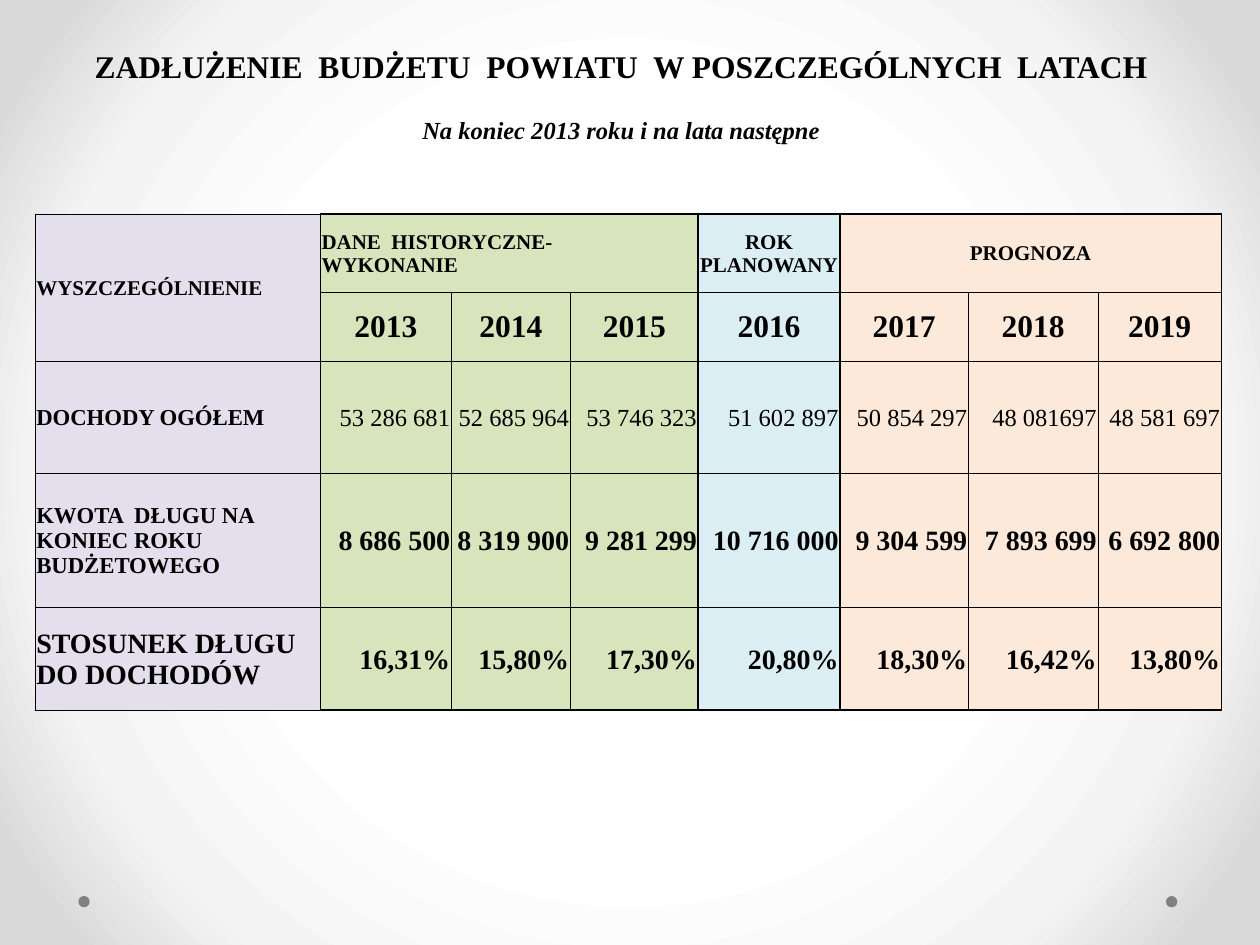
from lxml import etree
from pptx import Presentation
from pptx.dml.color import RGBColor
from pptx.enum.shapes import MSO_SHAPE as Shape
from pptx.enum.text import MSO_ANCHOR as Anchor, PP_ALIGN as Align
from pptx.oxml import parse_xml
from pptx.oxml.ns import nsdecls, qn
from pptx.util import Pt

FONT = "Times New Roman"
COLORS = {
    "text": "000000", "dot": "808080", "label": "E4DFEC", "history": "D8E4BC",
    "planned": "DAEEF3", "forecast": "FDE9D9",
}
BACKDROP = [(50, "FFFFFF"), (76, "F4F4F4"), (92, "DADADA")]

COLUMN_WIDTHS = [163, 75, 68, 73, 81, 73.5, 74, 70.5]
ROW_HEIGHTS = [44.5, 39.5, 64, 77, 58.5]
COLUMN_FILLS = ["label"] + ["history"] * 3 + ["planned"] + ["forecast"] * 3
GROUP_STARTS, GROUP_ENDS = {1, 4, 5}, {0, 3, 4, 7}
HEADINGS = [  # text, row, column, last row, last column, alignment
    ("WYSZCZEGÓLNIENIE", 0, 0, 1, 0, Align.LEFT),
    ("DANE  HISTORYCZNE-  WYKONANIE", 0, 1, 0, 3, Align.LEFT),
    ("ROK PLANOWANY", 0, 4, 0, 4, Align.CENTER),
    ("PROGNOZA", 0, 5, 0, 7, Align.CENTER),
]
YEARS = range(2013, 2020)
FIGURES = [  # label, label size, value size, bold values, values
    ("DOCHODY OGÓŁEM", 13, 14, False,
     ["53 286 681", "52 685 964", "53 746 323", "51 602 897",
      "50 854 297", "48 081697", "48 581 697"]),
    ("KWOTA  DŁUGU NA KONIEC ROKU BUDŻETOWEGO", 13, 16, True,
     ["8 686 500", "8 319 900", "9 281 299", "10 716 000",
      "9 304 599", "7 893 699", "6 692 800"]),
    ("STOSUNEK DŁUGU DO DOCHODÓW", 16, 16, True,
     ["16,31%", "15,80%", "17,30%", "20,80%", "18,30%", "16,42%", "13,80%"]),
]


def write(para, text, size=12, bold=True, italic=False, align=Align.LEFT,
          spacing=1.0, before=0):
    para.alignment = align
    para.line_spacing = spacing
    para.space_before = Pt(before)
    span = para.add_run()
    span.text = text
    font = span.font
    font.name, font.size, font.bold, font.italic = FONT, Pt(size), bold, italic
    font.color.rgb = RGBColor.from_string(COLORS["text"])


def set_borders(cell, **widths):
    """Draw left, top, right and bottom borders; a width of 0 means no line."""
    properties = cell._tc.get_or_add_tcPr()
    for index, side in enumerate("LTRB"):
        width = widths.get(side, 0)
        line = etree.Element(qn(f"a:ln{side}"), w=str(Pt(width)))
        if width:
            fill = etree.SubElement(line, qn("a:solidFill"))
            etree.SubElement(fill, qn("a:srgbClr"), val=COLORS["text"])
        else:
            etree.SubElement(line, qn("a:noFill"))
        properties.insert(index, line)


def set_margins(cell, side, top, bottom):
    cell.margin_left = cell.margin_right = Pt(side)
    cell.margin_top, cell.margin_bottom = Pt(top), Pt(bottom)


def add_plain_table(page, rows, columns, left, top, width, height):
    table = page.shapes.add_table(
        rows, columns, Pt(left), Pt(top), Pt(width), Pt(height)).table
    table.first_row = table.horz_banding = False
    return table


def add_backdrop(page):
    stops = "".join(
        f'<a:gs pos="{position * 1000}"><a:srgbClr val="{color}"/></a:gs>'
        for position, color in BACKDROP)
    background = parse_xml(
        f'<p:bg {nsdecls("p", "a")}><p:bgPr><a:gradFill rotWithShape="1">'
        f'<a:gsLst>{stops}</a:gsLst><a:path path="circle">'
        '<a:fillToRect l="50000" t="50000" r="50000" b="50000"/></a:path>'
        '</a:gradFill><a:effectLst/></p:bgPr></p:bg>')
    page._element.cSld.insert(0, background)


def add_corner_dots(page, left, top, width, size):
    for x in (left, left + width - size):
        dot = page.shapes.add_shape(Shape.OVAL, Pt(x), Pt(top), Pt(size), Pt(size))
        dot.shadow.inherit = False
        dot.fill.solid()
        dot.fill.fore_color.rgb = RGBColor.from_string(COLORS["dot"])
        dot.line.fill.background()


def add_title(page, left, top, width, height):
    cell = add_plain_table(page, 1, 1, left, top, width, height).cell(0, 0)
    set_margins(cell, 7.2, 0, 0)
    set_borders(cell)
    cell.fill.background()
    frame = cell.text_frame
    write(frame.paragraphs[0], "ZADŁUŻENIE  BUDŻETU  POWIATU  W POSZCZEGÓLNYCH  LATACH",
          size=18, align=Align.CENTER, spacing=1.15)
    write(frame.add_paragraph(), "Na koniec 2013 roku i na lata następne",
          size=14, italic=True, align=Align.CENTER, spacing=1.15, before=16)


def add_debt_table(page, left, top):
    rows, columns = len(ROW_HEIGHTS), len(COLUMN_WIDTHS)
    table = add_plain_table(page, rows, columns, left, top,
                            sum(COLUMN_WIDTHS), sum(ROW_HEIGHTS))
    for column, width in zip(table.columns, COLUMN_WIDTHS):
        column.width = Pt(width)
    for row, height in zip(table.rows, ROW_HEIGHTS):
        row.height = Pt(height)

    # Cell frames: heavy lines around each group of years
    for r in range(rows):
        for c in range(columns):
            cell = table.cell(r, c)
            set_margins(cell, 0.75, 0.75, 0)
            cell.vertical_anchor = Anchor.MIDDLE
            set_borders(cell,
                        L=1 if c in GROUP_STARTS else 0.5,
                        T=1 if r == 0 and c else 0.5,
                        R=1 if c in GROUP_ENDS else 0.5,
                        B=1 if r == rows - 1 and c else 0.5)
            cell.fill.solid()
            cell.fill.fore_color.rgb = RGBColor.from_string(COLORS[COLUMN_FILLS[c]])

    def put(r, c, text, **style):
        write(table.cell(r, c).text_frame.paragraphs[0], text, **style)

    # Headings and years
    for text, r, c, last_row, last_column, align in HEADINGS:
        if (r, c) != (last_row, last_column):
            table.cell(r, c).merge(table.cell(last_row, last_column))
        put(r, c, text, align=align)
    for c, year in enumerate(YEARS, 1):
        put(1, c, str(year), size=18, align=Align.CENTER)

    # Figures
    for r, (label, label_size, size, bold, values) in enumerate(FIGURES, 2):
        put(r, 0, label, size=label_size)
        for c, value in enumerate(values, 1):
            put(r, c, value, size=size, bold=bold, align=Align.RIGHT)


def main():
    deck = Presentation()
    deck.slide_width, deck.slide_height = Pt(720), Pt(540)
    page = deck.slides.add_slide(deck.slide_layouts[6])
    add_backdrop(page)
    add_corner_dots(page, left=44.75, top=512, width=628, size=6.5)
    add_title(page, left=31, top=26, width=648, height=60)
    add_debt_table(page, left=20, top=122.4)
    deck.save("out.pptx")


if __name__ == "__main__":
    main()
